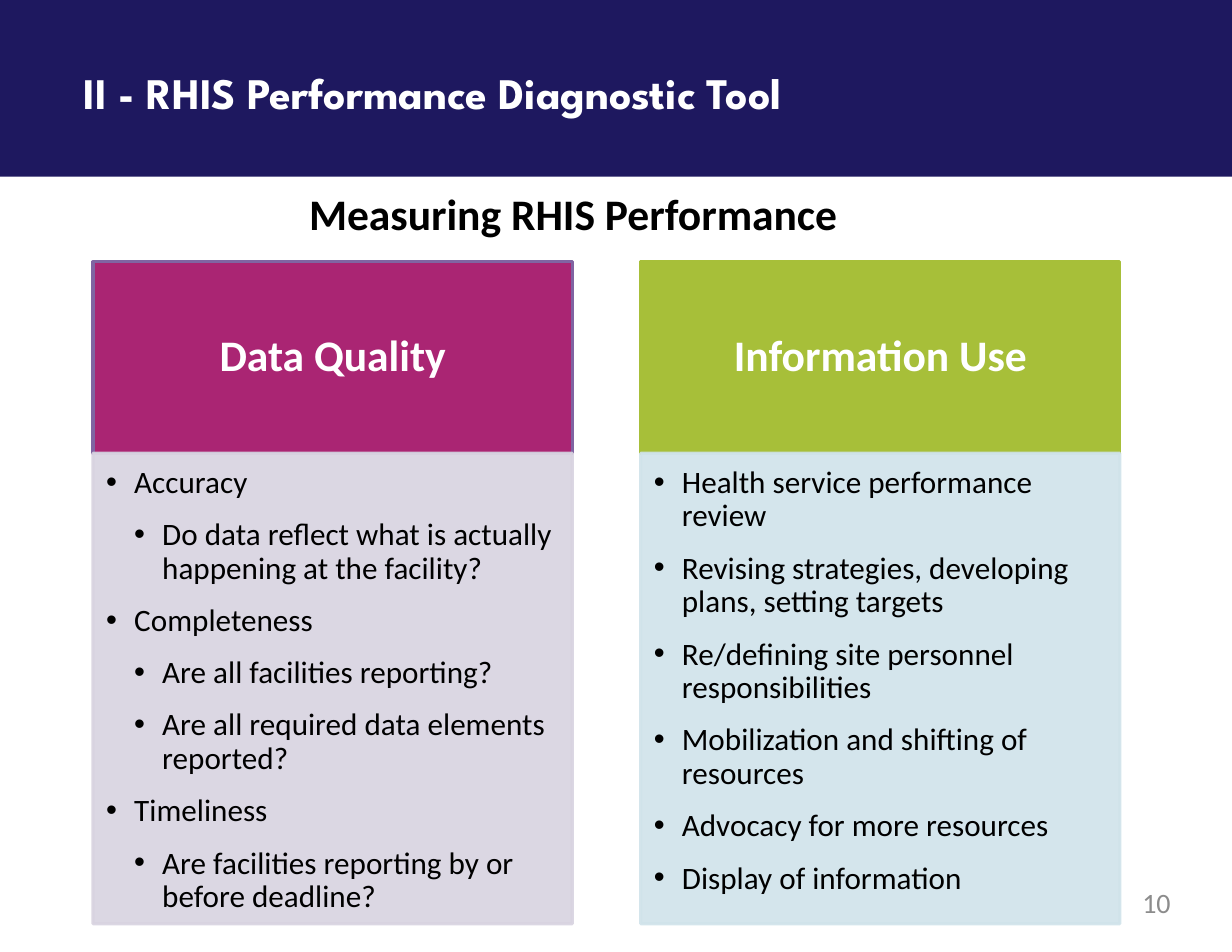
from lxml.etree import SubElement
from pptx import Presentation
from pptx.dml.color import RGBColor
from pptx.enum.shapes import MSO_SHAPE as Shape
from pptx.enum.text import MSO_ANCHOR as Anchor, PP_ALIGN as Align
from pptx.oxml.ns import qn
from pptx.util import Cm, Pt

NAVY = RGBColor(0x1E, 0x18, 0x5F)
MAGENTA = RGBColor(0xAA, 0x25, 0x73)
PURPLE = RGBColor(0x80, 0x64, 0xA2)
LILAC = RGBColor(0xD8, 0xD3, 0xE0)
GREEN = RGBColor(0xA7, 0xBF, 0x39)
PALE_BLUE = RGBColor(0xD0, 0xE3, 0xEA)
BLACK = RGBColor(0, 0, 0)
WHITE = RGBColor(0xFF, 0xFF, 0xFF)
GREY = RGBColor(0x8C, 0x8C, 0x8C)

COLUMNS = [
    ("Data Quality", MAGENTA, PURPLE, LILAC, [
        (0, "Accuracy"),
        (1, "Do data reflect what is actually happening at the facility?"),
        (0, "Completeness"),
        (1, "Are all facilities reporting?"),
        (1, "Are all required data elements reported?"),
        (0, "Timeliness"),
        (1, "Are facilities reporting by or before deadline?"),
    ]),
    ("Information Use", GREEN, GREEN, PALE_BLUE, [
        (0, "Health service performance review"),
        (0, "Revising strategies, developing plans, setting targets"),
        (0, "Re/defining site personnel responsibilities"),
        (0, "Mobilization and shifting of resources"),
        (0, "Advocacy for more resources"),
        (0, "Display of information"),
    ]),
]


def apply(target, values):
    for name, value in values.items():
        setattr(target, name, value)


def set_frame(frame, margins, anchor=Anchor.TOP):
    left, top, right, bottom = (Cm(margin) for margin in margins)
    apply(frame, {"margin_left": left, "margin_top": top, "margin_right": right,
                  "margin_bottom": bottom, "word_wrap": True, "vertical_anchor": anchor})


def write(paragraph, text, size, color, bold=False, face="Calibri", **layout):
    run = paragraph.add_run()
    run.text = text
    apply(run.font, {"size": Pt(size), "bold": bold, "name": face})
    run.font.color.rgb = color
    apply(paragraph, layout)


def add_label(slide, box, text, size, color, bold=True, face="Calibri", align=Align.LEFT):
    frame = slide.shapes.add_textbox(*map(Cm, box)).text_frame
    set_frame(frame, (0, 0, 0, 0))
    write(frame.paragraphs[0], text, size, color, bold, face, alignment=align)


def add_panel(slide, box, fill, outline, opacity=100):
    panel = slide.shapes.add_shape(Shape.RECTANGLE, *map(Cm, box))
    panel.shadow.inherit = False
    panel.fill.solid()
    panel.fill.fore_color.rgb = fill
    panel.line.color.rgb = outline
    panel.line.width = Pt(2)
    if opacity < 100:
        for color in panel.element.spPr.iter(qn("a:srgbClr")):
            SubElement(color, qn("a:alpha"), val=str(opacity * 1000))
    return panel


def add_bullet(paragraph, level):
    properties = paragraph._p.get_or_add_pPr()
    properties.set("marL", str(Cm(0.635 * (level + 1))))
    properties.set("indent", str(-Cm(0.635)))
    SubElement(properties, qn("a:buFont"), typeface="Arial")
    SubElement(properties, qn("a:buChar"), char="•")


def add_banner(slide, box):
    left, top, width, height = box
    banner = add_panel(slide, box, NAVY, NAVY)
    banner.line.fill.background()
    add_label(slide, (left + 1.9, top + 1.5, 23.3, 1.2),
              "II - RHIS Performance Diagnostic Tool", 28, WHITE, face="League Spartan")


def add_column(slide, box, heading, fill, outline, tint, points):
    left, top, width, height = box
    header_height = 4.34
    header = add_panel(slide, (left, top, width, header_height), fill, outline)
    set_frame(header.text_frame, (0.56, 0.3, 0.56, 0.3), Anchor.MIDDLE)
    write(header.text_frame.paragraphs[0], heading, 28, WHITE, True,
          alignment=Align.CENTER, line_spacing=0.9)

    body = add_panel(slide, (left, top + header_height, width, height - header_height),
                     tint, tint, opacity=90)
    frame = body.text_frame
    set_frame(frame, (0.3, 0.3, 0.4, 0.43))
    for index, (level, point) in enumerate(points):
        paragraph = frame.add_paragraph() if index else frame.paragraphs[0]
        write(paragraph, point, 20, BLACK, alignment=Align.LEFT, level=level,
              line_spacing=0.9, space_after=Pt(12))
        add_bullet(paragraph, level)


def add_columns(slide, box):
    left, top, width, height = box
    column_width = 10.87
    pitch = (width - column_width) / (len(COLUMNS) - 1)
    for index, column in enumerate(COLUMNS):
        add_column(slide, (left + index * pitch, top, column_width, height), *column)


def main():
    deck = Presentation()
    deck.slide_width, deck.slide_height = Cm(27.94), Cm(21.59)
    slide = deck.slides.add_slide(deck.slide_layouts[6])
    add_banner(slide, (0, 0, 27.94, 4.01))
    add_label(slide, (7.01, 4.24, 14.4, 1.2), "Measuring RHIS Performance", 28, BLACK)
    add_columns(slide, (2.11, 5.94, 23.29, 15.01))
    add_label(slide, (20.12, 20.09, 6.43, 1.07), "10", 18, GREY, bold=False, align=Align.RIGHT)
    deck.save("out.pptx")


if __name__ == "__main__":
    main()
